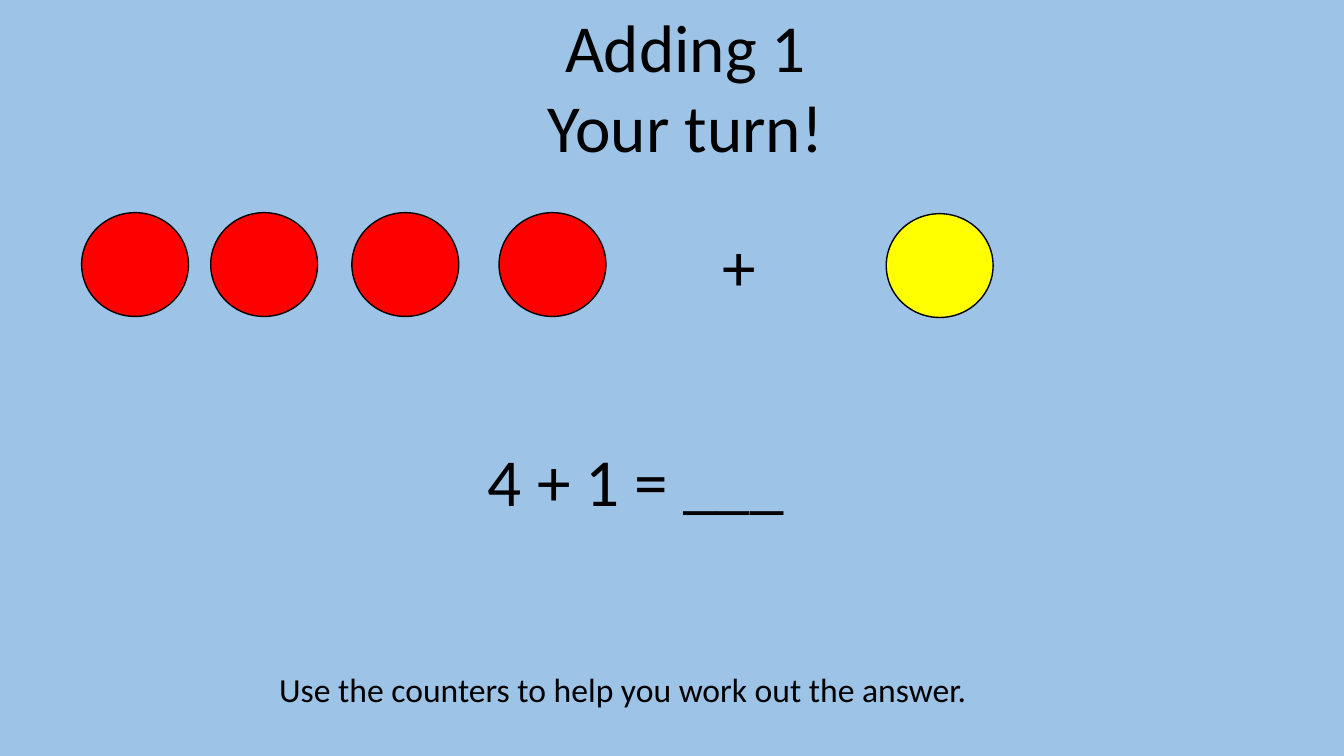
from pptx import Presentation
from pptx.dml.color import RGBColor
from pptx.enum.shapes import MSO_SHAPE
from pptx.enum.text import MSO_ANCHOR, MSO_AUTO_SIZE, PP_ALIGN
from pptx.util import Inches, Pt

OVAL = MSO_SHAPE.OVAL
TOP = MSO_ANCHOR.TOP
FIT_SHAPE = MSO_AUTO_SIZE.SHAPE_TO_FIT_TEXT
LEFT, CENTER = PP_ALIGN.LEFT, PP_ALIGN.CENTER
TITLE_ONLY = 5

SKY, BLACK, RED, YELLOW = "9DC3E6", "000000", "FF0000", "FFFF00"


def color(hex_value):
    return RGBColor.from_string(hex_value)


class CounterSlide:
    """Holds the lesson style and the slide being filled."""

    font_name = "Calibri"
    counter_size = (1.06, 1.03)

    def __init__(self, deck):
        self.slide = deck.slides.add_slide(deck.slide_layouts[TITLE_ONLY])
        background = self.slide.background.fill
        background.solid()
        background.fore_color.rgb = color(SKY)

    def fill_text(self, frame, lines, size, align):
        frame_format = {"word_wrap": True, "auto_size": FIT_SHAPE,
                        "vertical_anchor": TOP}
        for name, value in frame_format.items():
            setattr(frame, name, value)
        frame.text = "\n".join(lines)
        font_format = {"name": self.font_name, "size": Pt(size), "bold": False}
        for paragraph in frame.paragraphs:
            paragraph.alignment = align
            for run in paragraph.runs:
                for name, value in font_format.items():
                    setattr(run.font, name, value)
                run.font.color.rgb = color(BLACK)

    def title(self, lines, left, top, width, height):
        heading = self.slide.shapes.title
        place = {"left": left, "top": top, "width": width, "height": height}
        for name, value in place.items():
            setattr(heading, name, Inches(value))
        self.fill_text(heading.text_frame, lines, 48, CENTER)

    def text(self, line, left, top, width, height, size=48):
        box = self.slide.shapes.add_textbox(
            Inches(left), Inches(top), Inches(width), Inches(height))
        self.fill_text(box.text_frame, [line], size, LEFT)

    def counter(self, left, top, fill):
        width, height = self.counter_size
        disc = self.slide.shapes.add_shape(
            OVAL, Inches(left), Inches(top), Inches(width), Inches(height))
        disc.shadow.inherit = False
        disc.fill.solid()
        disc.fill.fore_color.rgb = color(fill)
        disc.line.color.rgb = color(BLACK)
        disc.line.width = Pt(1)


def main():
    deck = Presentation()
    deck.slide_width, deck.slide_height = Inches(13.33), Inches(7.5)
    lesson = CounterSlide(deck)

    # Heading
    lesson.title(["Adding 1", "Your turn!"], 1.23, 0, 11.14, 1.72)

    # Four red counters plus one yellow counter
    for left in (0.81, 2.09, 3.49, 4.95):
        lesson.counter(left, 2.11, RED)
    lesson.text("+", 7.07, 2.18, 1.72, 0.91)
    lesson.counter(8.79, 2.12, YELLOW)

    # Number sentence and instruction
    lesson.text("4 + 1 = ___", 4.74, 4.31, 3.86, 0.91)
    lesson.text("Use the counters to help you work out the answer.",
                2.67, 6.59, 8.79, 0.5, size=24)

    deck.save("out.pptx")


if __name__ == "__main__":
    main()
